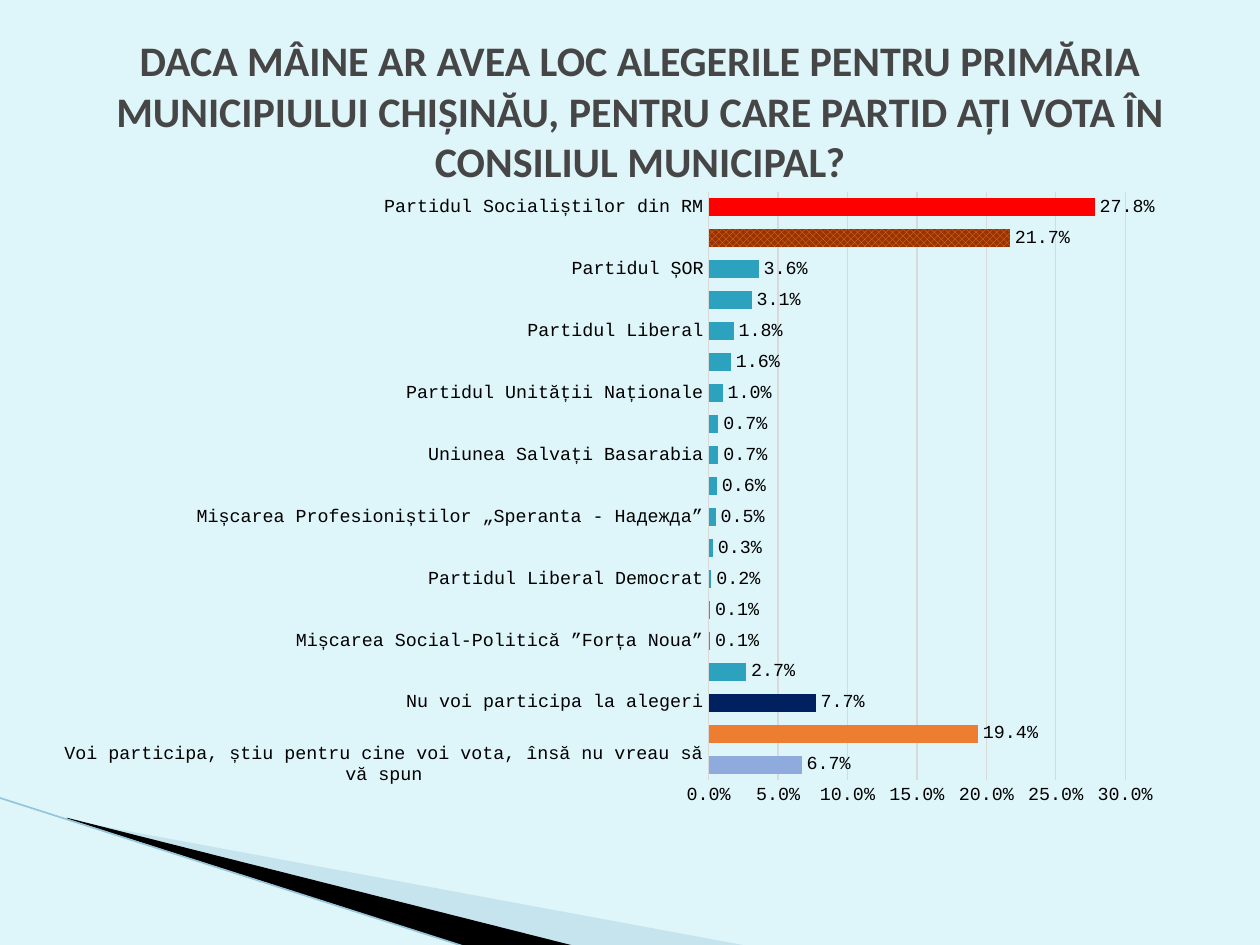
from lxml.etree import SubElement
from pptx import Presentation
from pptx.chart.data import CategoryChartData
from pptx.dml.color import RGBColor
from pptx.enum.chart import XL_CHART_TYPE, XL_LABEL_POSITION, XL_TICK_MARK
from pptx.enum.dml import MSO_PATTERN
from pptx.enum.shapes import MSO_CONNECTOR
from pptx.enum.text import MSO_ANCHOR, PP_ALIGN
from pptx.oxml.ns import qn
from pptx.util import Inches, Pt


def rgb(hex_color):
    return RGBColor.from_string(hex_color)


def set_font(font, **values):
    for name, value in values.items():
        if name == "color":
            font.color.rgb = rgb(value)
        else:
            setattr(font, name, value)


prs = Presentation()
prs.slide_width, prs.slide_height = Inches(10), Inches(7.5)
slide = prs.slides.add_slide(prs.slide_layouts[5])
slide.background.fill.solid()
slide.background.fill.fore_color.rgb = rgb("DEF5FA")

# Corner decoration: (fill, opacity in percent, outline points)
wedges = [
    ("A0CBDC", 40, [(0.55, 6.51), (5.95, 7.51), (4.56, 7.51), (0.55, 6.5)]),
    ("000000", 100, [(0.53, 6.49), (4.57, 7.51), (3.72, 7.52), (0.54, 6.5)]),
]
for color, opacity, points in wedges:
    corners = [(Inches(x), Inches(y)) for x, y in points]
    builder = slide.shapes.build_freeform(*corners[0])
    builder.add_line_segments(corners[1:], close=True)
    wedge = builder.convert_to_shape()
    wedge.shadow.inherit = False
    wedge.fill.solid()
    wedge.fill.fore_color.rgb = rgb(color)
    wedge.line.fill.background()
    if opacity < 100:
        fill_color = wedge._element.spPr.find(qn("a:solidFill"))[0]
        SubElement(fill_color, qn("a:alpha"), val=str(opacity * 1000))

edge = slide.shapes.add_connector(
    MSO_CONNECTOR.STRAIGHT, Inches(-0.01), Inches(6.33), Inches(3.71), Inches(7.52))
edge.line.color.rgb = rgb("97C5D8")
edge.line.width = Pt(0.95)
SubElement(edge._element.spPr, qn("a:effectLst"))

question = slide.shapes.title
question.left, question.top = Inches(0.58), Inches(0.25)
question.width, question.height = Inches(9), Inches(1.25)
question.text_frame.text = (
    "DACA MÂINE AR AVEA LOC ALEGERILE PENTRU PRIMĂRIA MUNICIPIULUI CHIȘINĂU, "
    "PENTRU CARE PARTID AȚI VOTA ÎN CONSILIUL MUNICIPAL?")
question.text_frame.word_wrap = True
question.text_frame.vertical_anchor = MSO_ANCHOR.MIDDLE
question_line = question.text_frame.paragraphs[0]
question_line.alignment = PP_ALIGN.CENTER
set_font(question_line.runs[0].font, name="Calibri", size=Pt(24), bold=True, color="464646")

# Answers from the bottom bar to the top one; every second bar is unlabelled
answers = [
    ("Voi participa, știu pentru cine voi vota, însă nu vreau să vă spun", 0.067),
    ("", 0.194),
    ("Nu voi participa la alegeri", 0.077),
    ("", 0.027),
    ("Mișcarea Social-Politică ”Forța Noua”", 0.001),
    ("", 0.001),
    ("Partidul Liberal Democrat", 0.002),
    ("", 0.003),
    ("Mișcarea Profesioniștilor „Speranta - Надежда”", 0.005),
    ("", 0.006),
    ("Uniunea Salvați Basarabia", 0.007),
    ("", 0.007),
    ("Partidul Unității Naționale", 0.01),
    ("", 0.016),
    ("Partidul Liberal", 0.018),
    ("", 0.031),
    ("Partidul ȘOR", 0.036),
    ("", 0.217),
    ("Partidul Socialiștilor din RM", 0.278),
]
poll = CategoryChartData(number_format="0.0%")
poll.categories = [answer for answer, share in answers]
poll.add_series("", [share for answer, share in answers])
chart = slide.shapes.add_chart(
    XL_CHART_TYPE.BAR_CLUSTERED, Inches(0.33), Inches(1.42), Inches(9), Inches(5.08), poll).chart
chart.has_legend = False
chart.has_title = False
chart_text = {"name": "Courier New", "size": Pt(10.5), "color": "000000"}

answer_axis, share_axis = chart.category_axis, chart.value_axis
for axis in (answer_axis, share_axis):
    axis.major_tick_mark = axis.minor_tick_mark = XL_TICK_MARK.NONE
    set_font(axis.tick_labels.font, **chart_text)
answer_axis.has_major_gridlines = False
share_axis.has_major_gridlines = True
for line in (answer_axis.format.line, share_axis.major_gridlines.format.line):
    line.color.rgb = rgb("D9D9D9")
    line.width = Pt(0.75)
share_axis.format.line.fill.background()
share_axis.tick_labels.number_format = "0.0%"
share_axis.tick_labels.number_format_is_linked = False

plot = chart.plots[0]
plot.gap_width = 70
plot.vary_by_categories = False
plot.has_data_labels = True
labels = plot.data_labels
label_format = {
    "show_value": True,
    "number_format": "0.0%",
    "number_format_is_linked": False,
    "position": XL_LABEL_POSITION.OUTSIDE_END,
}
for name, value in label_format.items():
    setattr(labels, name, value)
set_font(chart.font, **chart_text)
set_font(labels.font, **chart_text)

shares = plot.series[0]
shares.invert_if_negative = False
shares.format.fill.solid()
shares.format.fill.fore_color.rgb = rgb("2DA2BF")
for index, color in {0: "8FAADC", 1: "ED7D31", 2: "002060", 18: "FF0000"}.items():
    bar_fill = shares.points[index].format.fill
    bar_fill.solid()
    bar_fill.fore_color.rgb = rgb(color)
bloc_fill = shares.points[17].format.fill
bloc_fill.patterned()
bloc_fill.pattern = MSO_PATTERN.LARGE_CHECKER_BOARD
bloc_fill.fore_color.rgb = rgb("ED7D31")
bloc_fill.back_color.rgb = rgb("993300")

prs.save("out.pptx")
